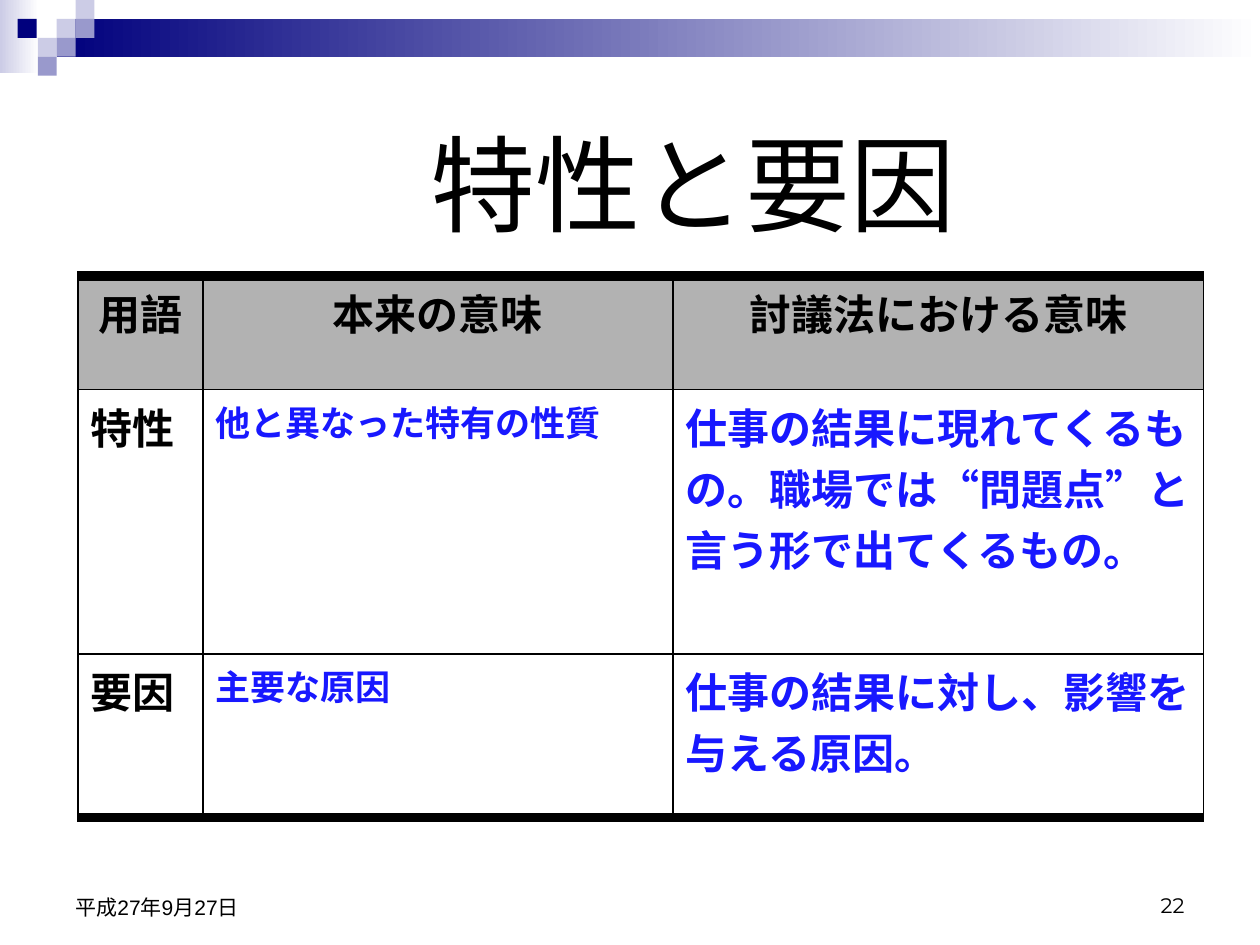
from lxml.etree import SubElement
from pptx import Presentation
from pptx.dml.color import RGBColor
from pptx.enum.shapes import MSO_SHAPE as Shape
from pptx.enum.text import MSO_ANCHOR as Anchor, PP_ALIGN as Align
from pptx.oxml.ns import qn
from pptx.util import Inches, Pt

BLACK = RGBColor(0x00, 0x00, 0x00)
WHITE = RGBColor(0xFF, 0xFF, 0xFF)
NAVY = RGBColor(0x00, 0x00, 0x7D)
LAVENDER = RGBColor(0xCC, 0xCC, 0xE6)
PERIWINKLE = RGBColor(0x99, 0x99, 0xCC)
BLUE = RGBColor(0x18, 0x18, 0xFF)
GRAY = RGBColor(0xB2, 0xB2, 0xB2)

TILE = 0.15
TILES = [  # left, top, colour
    (0.45, 0.15, LAVENDER), (0.6, 0, LAVENDER), (0.6, 0.15, PERIWINKLE),
    (0.3, 0.3, LAVENDER), (0.14, 0.15, NAVY), (0.45, 0.3, PERIWINKLE),
    (0.3, 0.45, PERIWINKLE),
]
COLUMN_WIDTHS = [0.99, 3.73, 4.21]
ROW_HEIGHTS = [0.9, 2.1, 1.3]
TERMS = [
    ["用語", "本来の意味", "討議法における意味"],
    ["特性", "他と異なった特有の性質",
     "仕事の結果に現れてくるもの。職場では“問題点”と言う形で出てくるもの。"],
    ["要因", "主要な原因", "仕事の結果に対し、影響を与える原因。"],
]


def format_paragraph(paragraph, size, color=BLACK, font="Arial", bold=False, align=Align.LEFT):
    paragraph.alignment = align
    for run in paragraph.runs:
        run.font.size = Pt(size)
        run.font.name = font
        run.font.bold = bold
        run.font.color.rgb = color


def add_rectangle(slide, left, top, width, height, color, fade=False):
    shape = slide.shapes.add_shape(
        Shape.RECTANGLE, Inches(left), Inches(top), Inches(width), Inches(height))
    shape.shadow.inherit = False
    shape.line.fill.background()
    if fade:
        shape.fill.gradient()
        shape.fill.gradient_angle = 0
        for stop, stop_color in zip(shape.fill.gradient_stops, (color, WHITE)):
            stop.color.rgb = stop_color
    else:
        shape.fill.solid()
        shape.fill.fore_color.rgb = color


def add_banner(slide, left, top, width):
    add_rectangle(slide, left, top, 0.31, 0.58, LAVENDER, fade=True)
    add_rectangle(slide, left + 0.45, top + TILE, width - 0.45, 2 * TILE, NAVY, fade=True)
    for tile_left, tile_top, color in TILES:
        add_rectangle(slide, left + tile_left, top + tile_top, TILE, TILE, color)


def add_text(slide, left, top, width, height, text, size, anchor, **style):
    box = slide.shapes.add_textbox(Inches(left), Inches(top), Inches(width), Inches(height))
    frame = box.text_frame
    frame.word_wrap = True
    frame.vertical_anchor = anchor
    frame.text = text
    format_paragraph(frame.paragraphs[0], size, **style)


def set_borders(cell, top, bottom):
    properties = cell._tc.get_or_add_tcPr()
    for tag, width in (("a:lnL", 1), ("a:lnR", 1), ("a:lnT", top), ("a:lnB", bottom)):
        line = SubElement(properties, qn(tag), w=str(Pt(width)))
        fill = SubElement(line, qn("a:solidFill"))
        SubElement(fill, qn("a:srgbClr"), val=str(BLACK))


def add_term_table(slide, left, top, width, height):
    table = slide.shapes.add_table(
        len(ROW_HEIGHTS), len(COLUMN_WIDTHS),
        Inches(left), Inches(top), Inches(width), Inches(height)).table
    for column, column_width in zip(table.columns, COLUMN_WIDTHS):
        column.width = Inches(column_width)
    for row, row_height in zip(table.rows, ROW_HEIGHTS):
        row.height = Inches(row_height)

    last_row = len(TERMS) - 1
    for row_index, texts in enumerate(TERMS):
        header = row_index == 0
        for column_index, text in enumerate(texts):
            cell = table.cell(row_index, column_index)
            set_borders(cell, 6 if header else 1, 6 if row_index == last_row else 1)
            if header:
                cell.fill.solid()
                cell.fill.fore_color.rgb = GRAY
            else:
                cell.fill.background()
            cell.text_frame.text = text
            paragraph = cell.text_frame.paragraphs[0]
            size = 20 if column_index == 1 and not header else 24
            paragraph.space_before = Pt(0.2 * size)
            format_paragraph(
                paragraph, size, BLACK if header or column_index == 0 else BLUE,
                bold=True, align=Align.CENTER if header else Align.LEFT)


def add_footer(slide, left, top, width, height):
    box_width = 2.33
    add_text(slide, left + width - box_width, top, box_width, height, "22", 12,
             Anchor.BOTTOM, font="Montserrat", align=Align.RIGHT)
    add_text(slide, left, top, box_width, height + 0.02, "平成27年9月27日", 12, Anchor.BOTTOM)


def main():
    presentation = Presentation()
    presentation.slide_width = Inches(10)
    presentation.slide_height = Inches(7.5)
    slide = presentation.slides.add_slide(presentation.slide_layouts[6])

    # Decorative strip along the top
    add_banner(slide, 0, 0, 10)
    # Date and slide number
    add_footer(slide, 0.5, 6.83, 9, 0.5)
    # Title
    add_text(slide, 1, 0.7, 9, 1.5, "特性と要因", 60, Anchor.MIDDLE, align=Align.CENTER)
    # Table of terms
    add_term_table(slide, 0.62, 2.19, sum(COLUMN_WIDTHS), sum(ROW_HEIGHTS))

    presentation.save("out.pptx")


if __name__ == "__main__":
    main()
